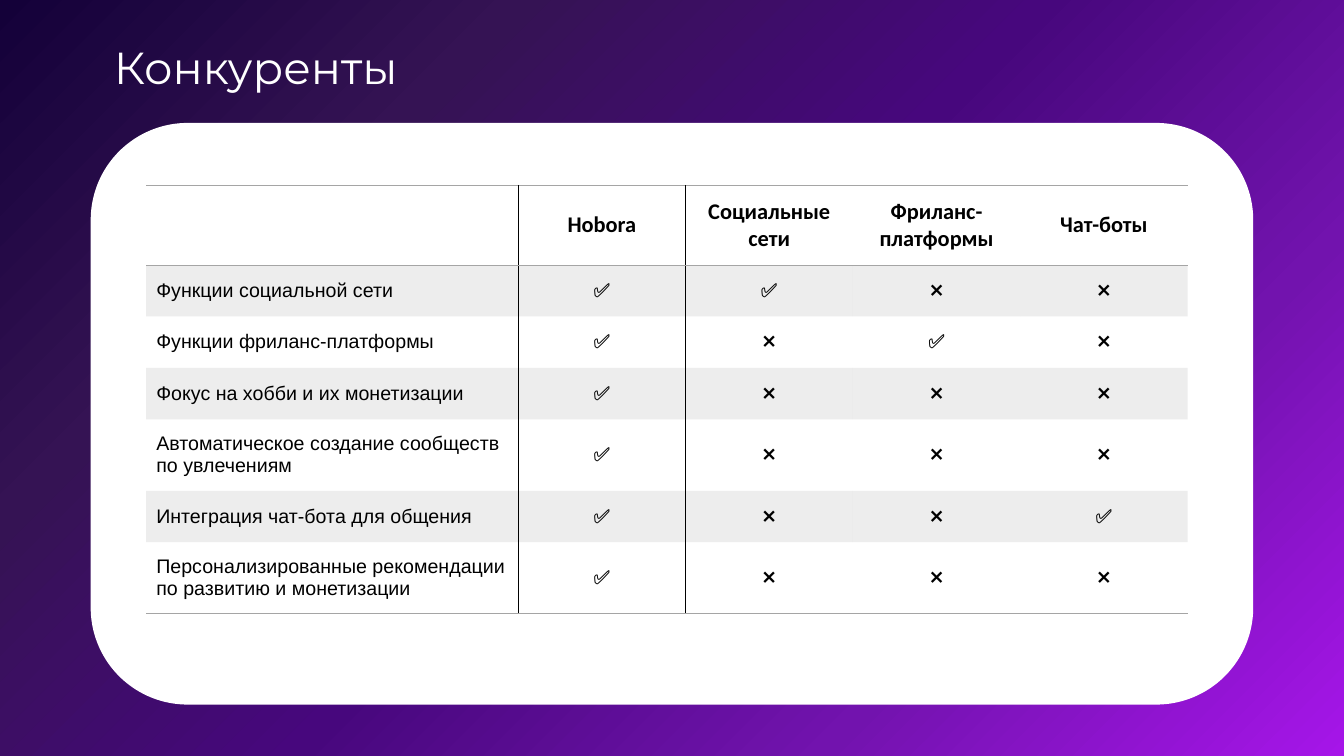
from lxml.etree import SubElement
from pptx import Presentation
from pptx.dml.color import RGBColor
from pptx.enum.shapes import MSO_SHAPE
from pptx.enum.text import MSO_ANCHOR, MSO_AUTO_SIZE, PP_ALIGN
from pptx.oxml import parse_xml
from pptx.oxml.ns import nsdecls, qn
from pptx.util import Inches, Pt

COLORS = {"white": "FFFFFF", "text": "000000", "rule": "A5A5A5", "divider": "000000"}
GRADIENT = ["140139", "351354", "47077D", "7213AE", "A615E9"]
YES, NO = "✅", "❌"
ROWS = [
    ["", "Hobora", "Социальные сети", "Фриланс-платформы", "Чат-боты"],
    ["Функции социальной сети", YES, YES, NO, NO],
    ["Функции фриланс-платформы", YES, NO, YES, NO],
    ["Фокус на хобби и их монетизации", YES, NO, NO, NO],
    ["Автоматическое создание сообществ по увлечениям", YES, NO, NO, NO],
    ["Интеграция чат-бота для общения", YES, NO, NO, YES],
    ["Персонализированные рекомендации по развитию и монетизации", YES, NO, NO, NO],
]
COLUMN_WIDTHS = [3.69] + [1.66] * 4
ROW_HEIGHTS = [0.79, 0.51, 0.51, 0.51, 0.71, 0.51, 0.71]
RULED_ROW_EDGES = {0, 1, len(ROWS)}
RULED_COLUMN_EDGES = {1, 2}


def format_text(text_frame, font_name, size, color, bold=False, align=PP_ALIGN.LEFT):
    """Apply one style to all the text of a frame."""
    for paragraph in text_frame.paragraphs:
        paragraph.alignment = align
        for run in paragraph.runs:
            run.font.name = font_name
            run.font.size = Pt(size)
            run.font.bold = bold
            run.font.color.rgb = RGBColor.from_string(COLORS[color])


def paint_background(slide):
    """Fill the slide with a diagonal gradient of evenly spaced colours."""
    fill = slide.background.fill
    fill.gradient()
    fill.gradient_angle = 315
    stops = slide.element.find(".//" + qn("a:gsLst"))
    for stop in list(stops):
        stops.remove(stop)
    for index, color in enumerate(GRADIENT):
        position = index * 100000 // (len(GRADIENT) - 1)
        stop = SubElement(stops, qn("a:gs"), pos=str(position))
        SubElement(stop, qn("a:srgbClr"), val=color)


def add_title(slide, text):
    """Place and format the slide title."""
    title = slide.shapes.title
    title.left, title.top = Inches(1.03), Inches(0.34)
    title.width, title.height = Inches(3.27), Inches(0.64)
    title.text_frame.text = text
    title.text_frame.word_wrap = False
    title.text_frame.auto_size = MSO_AUTO_SIZE.SHAPE_TO_FIT_TEXT
    format_text(title.text_frame, "Montserrat", 32, "white")


def add_card(slide):
    """Add the white rounded panel behind the table."""
    card = slide.shapes.add_shape(
        MSO_SHAPE.ROUNDED_RECTANGLE, Inches(0.9), Inches(1.22), Inches(11.53), Inches(5.77))
    card.shadow.inherit = False
    card.fill.solid()
    card.fill.fore_color.rgb = RGBColor.from_string(COLORS["white"])
    card.line.fill.background()


def set_borders(properties, row, column):
    """Draw the cell sides that lie on a ruled grid line and clear the others."""
    sides = [
        ("L", column in RULED_COLUMN_EDGES, "divider"),
        ("R", column + 1 in RULED_COLUMN_EDGES, "divider"),
        ("T", row in RULED_ROW_EDGES, "rule"),
        ("B", row + 1 in RULED_ROW_EDGES, "rule"),
    ]
    for position, (side, ruled, color) in enumerate(sides):
        paint = "<a:noFill/>"
        if ruled:
            paint = f'<a:solidFill><a:srgbClr val="{COLORS[color]}"/></a:solidFill>'
        border = parse_xml(f'<a:ln{side} {nsdecls("a")} w="{Pt(1)}">{paint}</a:ln{side}>')
        properties.insert(position, border)


def fill_cell(cell, properties, banded):
    """Tint a banded cell and leave any other cell clear."""
    if not banded:
        cell.fill.background()
        return
    cell.fill.solid()
    cell.fill.fore_color.rgb = RGBColor.from_string(COLORS["rule"])
    SubElement(properties.find(".//" + qn("a:srgbClr")), qn("a:alpha"), val="20000")


def format_cell(cell, row, column, text):
    """Write and style one table cell."""
    cell.text_frame.text = text
    cell.vertical_anchor = MSO_ANCHOR.MIDDLE
    font_name, align = ("Calibri", PP_ALIGN.CENTER) if column else ("Arial", PP_ALIGN.LEFT)
    format_text(cell.text_frame, font_name, 14 if row else 16, "text", row == 0, align)
    properties = cell.text_frame._txBody.getparent().find(qn("a:tcPr"))
    fill_cell(cell, properties, row % 2 == 1)
    set_borders(properties, row, column)


def add_comparison_table(slide):
    """Add the table that compares the competitors."""
    table = slide.shapes.add_table(
        len(ROWS), len(COLUMN_WIDTHS), Inches(1.45), Inches(1.84),
        Inches(sum(COLUMN_WIDTHS)), Inches(sum(ROW_HEIGHTS))).table
    table.first_row = table.horz_banding = False
    for column, width in zip(table.columns, COLUMN_WIDTHS):
        column.width = Inches(width)
    for row, height in zip(table.rows, ROW_HEIGHTS):
        row.height = Inches(height)
    for row, texts in enumerate(ROWS):
        for column, text in enumerate(texts):
            format_cell(table.cell(row, column), row, column, text)


def main():
    """Build and save the competitors slide."""
    presentation = Presentation()
    presentation.slide_width, presentation.slide_height = Inches(13.33), Inches(7.5)
    slide = presentation.slides.add_slide(presentation.slide_layouts[5])
    paint_background(slide)
    add_title(slide, "Конкуренты")
    add_card(slide)
    add_comparison_table(slide)
    presentation.save("out.pptx")


if __name__ == "__main__":
    main()
